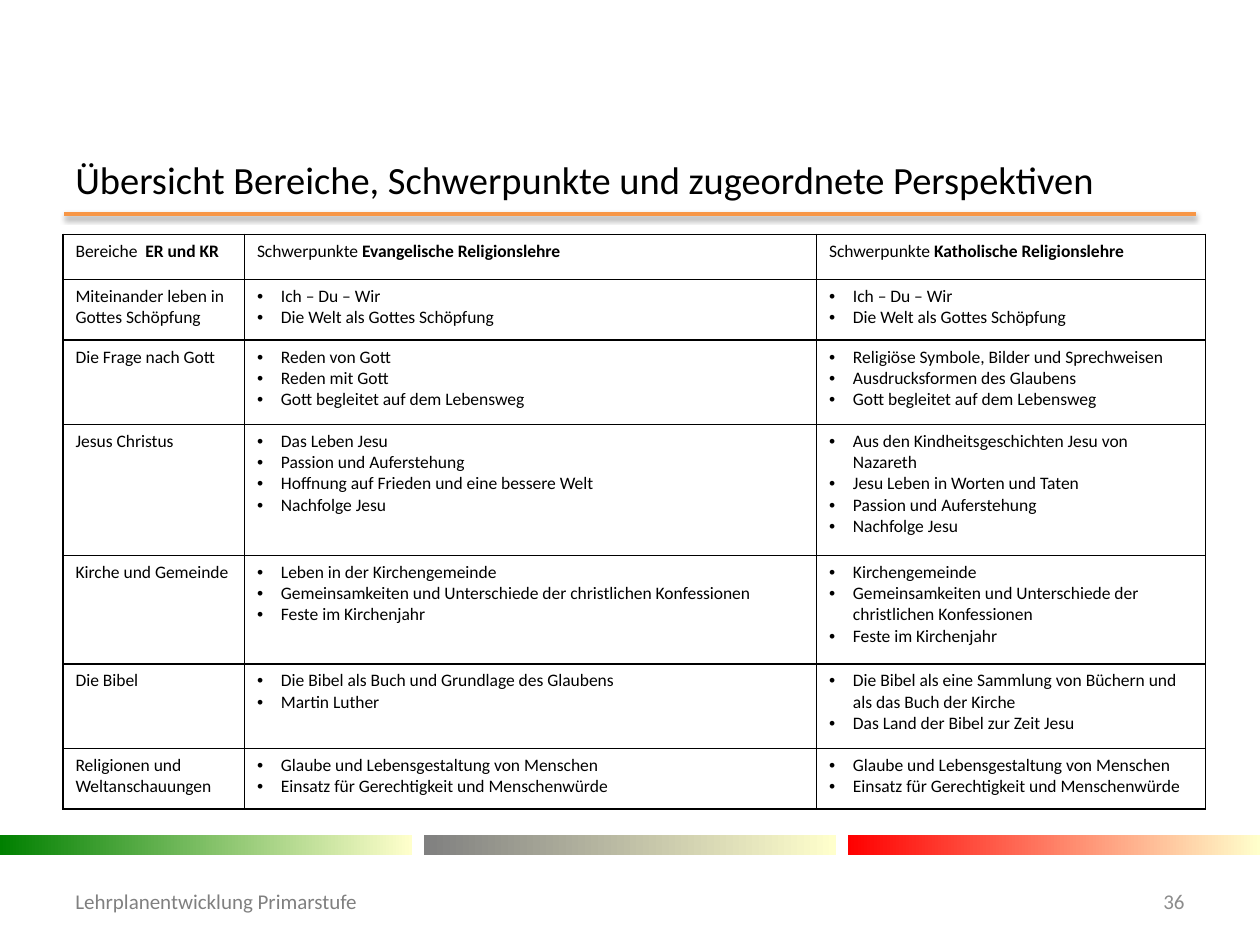
from pptx import Presentation
from pptx.util import Inches, Pt
from pptx.dml.color import RGBColor
from pptx.enum.shapes import MSO_SHAPE as Shape, MSO_CONNECTOR as Link
from pptx.enum.text import PP_ALIGN as Align, MSO_ANCHOR as Anchor
from pptx.oxml import parse_xml
from pptx.oxml.ns import nsdecls

BLACK = RGBColor(0x00, 0x00, 0x00)
ORANGE = RGBColor(0xF7, 0x96, 0x46)
GREEN = RGBColor(0x00, 0x80, 0x00)
GREY = RGBColor(0x80, 0x80, 0x80)
RED = RGBColor(0xFF, 0x00, 0x00)
CREAM = RGBColor(0xFF, 0xFF, 0xCC)
PALE = RGBColor(0x8C, 0x8C, 0x8C)
NS = nsdecls("a")

deck = Presentation()
deck.slide_width = Inches(10)
deck.slide_height = Inches(7.5)
slide = deck.slides.add_slide(deck.slide_layouts[6])
shapes = slide.shapes
X = deck.slide_width / 100
Y = deck.slide_height / 100


def area(x, y, w, h):
    return round(x * X), round(y * Y), round(w * X), round(h * Y)


def write(frame, text, size=10, color=BLACK, align=Align.LEFT, bullet=False):
    frame.word_wrap = True
    for i, line in enumerate(text.split("\n")):
        para = frame.add_paragraph() if i else frame.paragraphs[0]
        para.alignment = align
        if bullet:
            props = para._p.get_or_add_pPr()
            props.set("marL", str(round(1.9 * X)))
            props.set("indent", str(round(-1.9 * X)))
            props.append(parse_xml(f'<a:buFont {NS} typeface="Arial"/>'))
            props.append(parse_xml(f'<a:buChar {NS} char="•"/>'))
        for bold, part in enumerate(line.split("|")):
            run = para.add_run()
            run.text = part
            run.font.name = "Calibri"
            run.font.size = Pt(size)
            run.font.bold = bool(bold)
            run.font.color.rgb = color


x, y, w, h = area(5.1, 22.67, 89.8, 0)
rule = shapes.add_connector(Link.STRAIGHT, x, y, x + w, y)
rule.line.color.rgb = ORANGE
rule.line.width = Pt(2)
rule._element.spPr.append(parse_xml(
    f'<a:effectLst {NS}><a:outerShdw blurRad="{Pt(3.1)}" dist="{Pt(1.6)}" '
    'dir="5400000" rotWithShape="0"><a:srgbClr val="000000">'
    '<a:alpha val="38000"/></a:srgbClr></a:outerShdw></a:effectLst>'))

for i, color in enumerate([GREEN, GREY, RED]):
    bar = shapes.add_shape(Shape.RECTANGLE, *area(i * 33.65, 88.4, 32.7, 2.13))
    bar.shadow.inherit = False
    bar.line.fill.background()
    bar.fill.gradient()
    bar.fill.gradient_angle = 0
    for stop, tone in zip(bar.fill.gradient_stops, [color, CREAM]):
        stop.color.rgb = tone

labels = [
    ((5, 16.4, 90, 5.2),
     "Übersicht Bereiche, Schwerpunkte und zugeordnete Perspektiven",
     22, BLACK, Align.LEFT),
    ((5, 92.67, 30.8, 5.33), "Lehrplanentwicklung Primarstufe", 12, GREY, Align.LEFT),
    ((88.6, 92.67, 6.4, 5.33), "36", 12, PALE, Align.RIGHT),
]
for place, text, size, color, align in labels:
    frame = shapes.add_textbox(*area(*place)).text_frame
    frame.vertical_anchor = Anchor.MIDDLE
    write(frame, text, size=size, color=color, align=align)

cols = [14.4, 45.4, 30.9]
rows = [
    (4.8, "Bereiche  |ER und KR",
     "Schwerpunkte |Evangelische Religionslehre",
     "Schwerpunkte |Katholische Religionslehre"),
    (6.4, "Miteinander leben in Gottes Schöpfung",
     "Ich – Du – Wir\nDie Welt als Gottes Schöpfung",
     "Ich – Du – Wir\nDie Welt als Gottes Schöpfung"),
    (8.93, "Die Frage nach Gott",
     "Reden von Gott\nReden mit Gott\nGott begleitet auf dem Lebensweg",
     "Religiöse Symbole, Bilder und Sprechweisen\n"
     "Ausdrucksformen des Glaubens\nGott begleitet auf dem Lebensweg"),
    (13.87, "Jesus Christus",
     "Das Leben Jesu\nPassion und Auferstehung\n"
     "Hoffnung auf Frieden und eine bessere Welt\nNachfolge Jesu",
     "Aus den Kindheitsgeschichten Jesu von Nazareth\n"
     "Jesu Leben in Worten und Taten\nPassion und Auferstehung\nNachfolge Jesu"),
    (11.47, "Kirche und Gemeinde",
     "Leben in der Kirchengemeinde\n"
     "Gemeinsamkeiten und Unterschiede der christlichen Konfessionen\n"
     "Feste im Kirchenjahr",
     "Kirchengemeinde\n"
     "Gemeinsamkeiten und Unterschiede der christlichen Konfessionen\n"
     "Feste im Kirchenjahr"),
    (8.93, "Die Bibel",
     "Die Bibel als Buch und Grundlage des Glaubens\nMartin Luther",
     "Die Bibel als eine Sammlung von Büchern und als das Buch der Kirche\n"
     "Das Land der Bibel zur Zeit Jesu"),
    (6.4, "Religionen und Weltanschauungen",
     "Glaube und Lebensgestaltung von Menschen\n"
     "Einsatz für Gerechtigkeit und Menschenwürde",
     "Glaube und Lebensgestaltung von Menschen\n"
     "Einsatz für Gerechtigkeit und Menschenwürde"),
]
high = sum(row[0] for row in rows)
table = shapes.add_table(
    len(rows), len(cols), *area(5, 24.8, sum(cols), high)).table
table.first_row = False
table.horz_banding = False
for col, wide in zip(table.columns, cols):
    col.width = round(wide * X)
for r, (tall, *texts) in enumerate(rows):
    table.rows[r].height = round(tall * Y)
    for c, text in enumerate(texts):
        cell = table.cell(r, c)
        write(cell.text_frame, text, bullet=r > 0 and c > 0)
        props = cell._tc.get_or_add_tcPr()
        for side in "LRTB":
            props.append(parse_xml(
                f'<a:ln{side} {NS} w="{Pt(1)}"><a:solidFill>'
                f'<a:srgbClr val="{BLACK}"/></a:solidFill></a:ln{side}>'))
        cell.fill.background()

deck.save("out.pptx")
